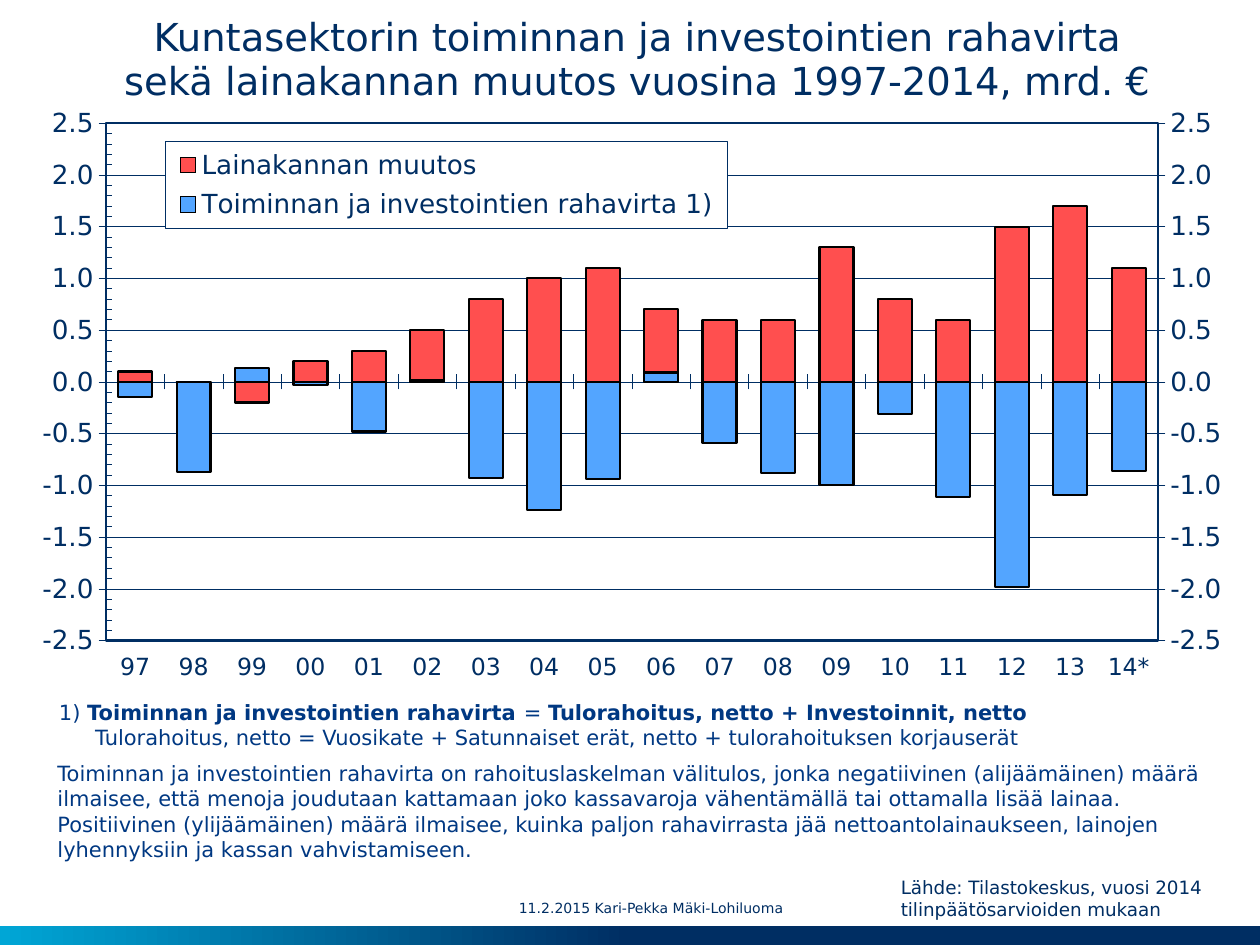
from copy import deepcopy
from lxml.etree import SubElement
from pptx import Presentation
from pptx.chart.data import CategoryChartData
from pptx.dml.color import RGBColor
from pptx.enum.chart import XL_CHART_TYPE, XL_LEGEND_POSITION, XL_TICK_LABEL_POSITION, XL_TICK_MARK
from pptx.enum.dml import MSO_LINE
from pptx.enum.shapes import MSO_SHAPE
from pptx.enum.text import MSO_ANCHOR, PP_ALIGN
from pptx.oxml import parse_xml
from pptx.oxml.ns import nsdecls, qn
from pptx.util import Cm, Pt

NAVY, BLUE, CYAN = "002E63", "003882", "00A6D6"


def tint(code):
    return RGBColor.from_string(code)


def place(left, top, wide, high):
    return Cm(left), Cm(top), Cm(wide), Cm(high)


def frame(fill, width):
    return parse_xml(
        f'<c:spPr {nsdecls("c", "a")}>{fill}<a:ln w="{Pt(width)}"><a:solidFill>'
        f'<a:srgbClr val="{NAVY}"/></a:solidFill></a:ln></c:spPr>')


def layout(x, y, w, h, inner=False):
    target = '<c:layoutTarget val="inner"/>' if inner else ""
    return parse_xml(
        f'<c:layout {nsdecls("c")}><c:manualLayout>{target}'
        '<c:xMode val="edge"/><c:yMode val="edge"/>'
        f'<c:x val="{x}"/><c:y val="{y}"/><c:w val="{w}"/><c:h val="{h}"/>'
        '</c:manualLayout></c:layout>')


class Deck:
    face = "DejaVu Sans"

    def __init__(self):
        self.prs = Presentation()
        self.prs.slide_width, self.prs.slide_height = Cm(25.4), Cm(19.05)
        self.slide = self.prs.slides.add_slide(self.prs.slide_layouts[6])

    def style(self, font, size, color=NAVY):
        font.name, font.size, font.color.rgb = self.face, Pt(size), tint(color)

    def band(self, box):
        shape = self.slide.shapes.add_shape(MSO_SHAPE.RECTANGLE, *place(*box))
        shape.shadow.inherit = False
        shape.line.fill.background()
        shape.fill.gradient()
        shape.fill.gradient_angle = 180
        for stop, pos, color in zip(shape.fill.gradient_stops, (0.5, 1), (NAVY, CYAN)):
            stop.position, stop.color.rgb = pos, tint(color)

    def text(self, box, lines, size, color=NAVY, align=None, space=None,
             flush=False, middle=False, shifts=()):
        frame = self.slide.shapes.add_textbox(*place(*box)).text_frame
        frame.word_wrap = True
        if flush:
            frame.margin_left = frame.margin_right = 0
            frame.margin_top = frame.margin_bottom = 0
        if middle:
            frame.vertical_anchor = MSO_ANCHOR.MIDDLE
        for i, line in enumerate(lines):
            para = frame.add_paragraph() if i else frame.paragraphs[0]
            if shifts:
                para._p.get_or_add_pPr().set("marL", str(Cm(shifts[i])))
            para.alignment, para.line_spacing = align, space
            self.style(para.font, size, color)
            for j, part in enumerate(line.split("|")):
                run = para.add_run()
                run.text = part
                if j % 2:
                    run.font.bold = True

    def axis(self, axis, size):
        self.style(axis.tick_labels.font, size)
        axis.major_tick_mark = XL_TICK_MARK.CROSS
        axis.format.line.color.rgb = tint(NAVY)
        axis.format.line.width = Pt(0.3)

    def split(self, chart):
        area = chart._chartSpace.chart.plotArea
        first = area.find(qn("c:barChart"))
        twin = deepcopy(first)
        first.remove(first.findall(qn("c:ser"))[1])
        twin.remove(twin.find(qn("c:ser")))
        first.addnext(twin)
        for node, code in zip(twin.findall(qn("c:axId")), ("501", "502")):
            node.set("val", code)
        cat, val = area.find(qn("c:catAx")), area.find(qn("c:valAx"))
        left, right = deepcopy(cat), deepcopy(val)
        val.addnext(right)
        right.addnext(left)
        for node, own, other in ((left, "501", "502"), (right, "502", "501")):
            node.find(qn("c:axId")).set("val", own)
            node.find(qn("c:crossAx")).set("val", other)
        left.find(qn("c:delete")).set("val", "1")
        right.find(qn("c:axPos")).set("val", "r")
        right.find(qn("c:crosses")).set("val", "max")
        right.remove(right.find(qn("c:majorGridlines")))
        right.find(qn("c:minorTickMark")).set("val", "none")

    def chart(self, box, cats, rows, plot, key):
        data = CategoryChartData(number_format="0.0")
        data.categories = cats
        for name, _, vals in rows:
            data.add_series(name, vals)
        chart = self.slide.shapes.add_chart(
            XL_CHART_TYPE.COLUMN_CLUSTERED, *place(*box), data).chart
        chart.has_title = False
        self.style(chart.font, 15)
        bars = chart.plots[0]
        bars.gap_width, bars.vary_by_categories = 72, False
        for series, (_, color, _) in zip(bars.series, rows):
            series.invert_if_negative = False
            series.format.fill.solid()
            series.format.fill.fore_color.rgb = tint(color)
            series.format.line.color.rgb = tint("000000")
            series.format.line.width = Pt(1.25)
        self.axis(chart.category_axis, 13.5)
        chart.category_axis.tick_label_position = XL_TICK_LABEL_POSITION.LOW
        val = chart.value_axis
        self.axis(val, 15)
        val.minimum_scale, val.maximum_scale = -2.5, 2.5
        val.major_unit, val.minor_unit = 0.5, 0.1
        val.minor_tick_mark = XL_TICK_MARK.INSIDE
        val.tick_labels.number_format = "0.0"
        val.tick_labels.number_format_is_linked = False
        grid = val.major_gridlines.format.line
        grid.color.rgb, grid.width = tint(NAVY), Pt(0.25)
        grid.dash_style = MSO_LINE.ROUND_DOT
        self.split(chart)
        area = chart._chartSpace.chart.plotArea
        for old in area.findall(qn("c:layout")):
            area.remove(old)
        area.insert(0, layout(*plot, inner=True))
        area.append(frame("<a:noFill/>", 1.5))
        chart.has_legend = True
        legend = chart.legend
        legend.position = XL_LEGEND_POSITION.RIGHT
        legend.include_in_layout = False
        self.style(legend.font, 15)
        root = legend._element
        for old in root.findall(qn("c:layout")):
            root.remove(old)
        root.find(qn("c:legendPos")).addnext(layout(*key))
        white = '<a:solidFill><a:srgbClr val="FFFFFF"/></a:solidFill>'
        root.find(qn("c:txPr")).addprevious(frame(white, 0.3))


def main():
    deck = Deck()
    deck.band((0, 18.67, 25.4, 0.38))
    deck.chart(
        (0.69, 2.11, 24.1, 12.42),
        [f"{n % 100:02}" for n in range(97, 114)] + ["14*"],
        [("Lainakannan muutos", "FF4F4F",
          (0.1, 0, -0.2, 0.2, 0.3, 0.5, 0.8, 1, 1.1, 0.7, 0.6, 0.6,
           1.3, 0.8, 0.6, 1.5, 1.7, 1.1)),
         ("Toiminnan ja investointien rahavirta 1)", "53A5FF",
          (-0.15, -0.87, 0.13, -0.03, -0.48, 0.02, -0.93, -1.24, -0.94, 0.09,
           -0.59, -0.88, -1, -0.31, -1.11, -1.98, -1.09, -0.86))],
        plot=(0.06, 0.03, 0.88, 0.84), key=(0.11, 0.06, 0.47, 0.14))
    deck.text((17.91, 17.53, 7.09, 1.19),
              ["Lähde: Tilastokeskus, vuosi 2014 tilinpäätösarvioiden mukaan"], 10.5)
    deck.text((10.46, 17.93, 8.61, 0.74), ["11.2.2015 Kari-Pekka Mäki-Lohiluoma"], 8,
              flush=True, middle=True)
    deck.text((0.69, 0.33, 24.31, 1.78),
              ["Kuntasektorin toiminnan ja investointien rahavirta",
               "sekä lainakannan muutos vuosina 1997-2014, mrd. €"],
              22, align=PP_ALIGN.CENTER, space=0.95, flush=True)
    deck.text((0.91, 15.21, 24.21, 2.31),
              ["Toiminnan ja investointien rahavirta on rahoituslaskelman välitulos, "
               "jonka negatiivinen (alijäämäinen) määrä ilmaisee, että menoja joudutaan "
               "kattamaan joko kassavaroja vähentämällä tai ottamalla lisää lainaa. "
               "Positiivinen (ylijäämäinen) määrä ilmaisee, kuinka paljon rahavirrasta "
               "jää nettoantolainaukseen, lainojen lyhennyksiin ja kassan vahvistamiseen."],
              12, BLUE)
    deck.text((0.79, 13.98, 23.5, 1.37),
              ["1) |Toiminnan ja investointien rahavirta |= "
               "|Tulorahoitus, netto + Investoinnit, netto",
               "Tulorahoitus, netto = Vuosikate + Satunnaiset erät, netto "
               "+ tulorahoituksen korjauserät"],
              12, BLUE, shifts=(0.15, 0.88))
    deck.prs.save("out.pptx")


if __name__ == "__main__":
    main()
